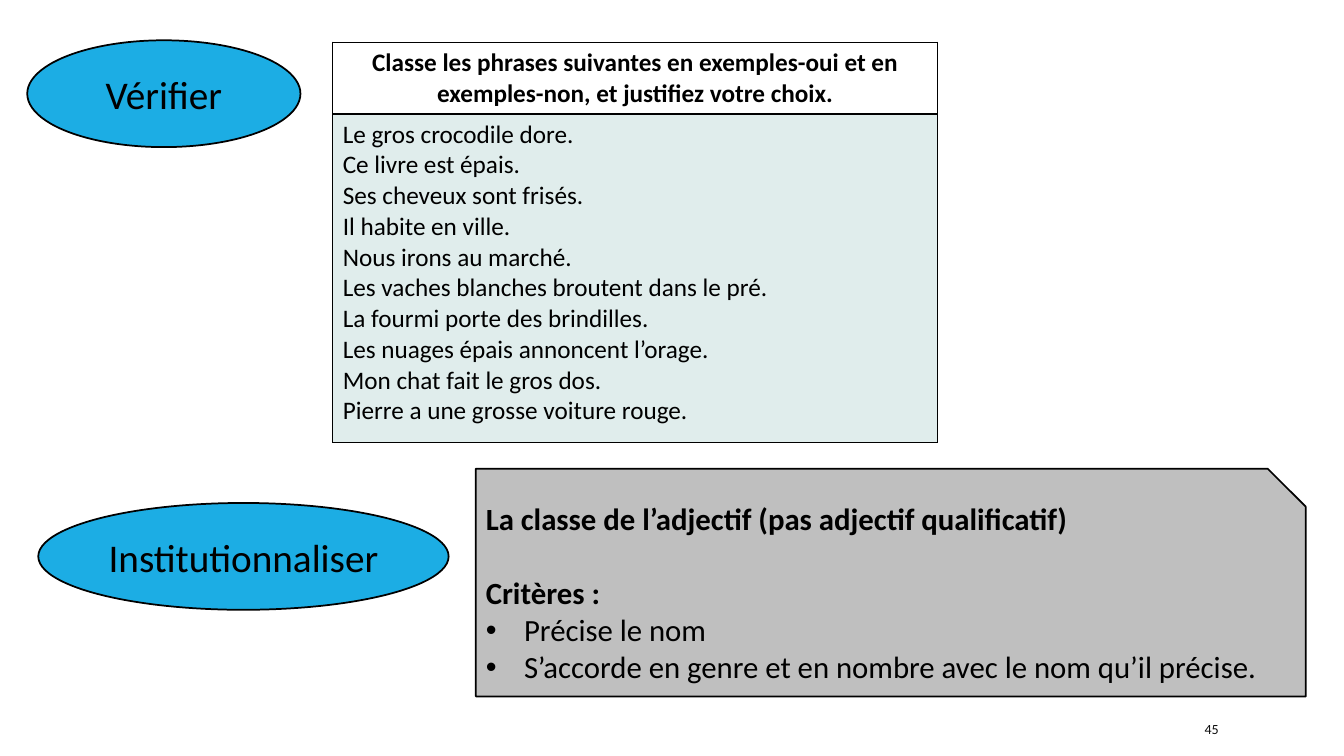
"""Build the slide on checking and formalising the adjective class."""
from dataclasses import dataclass

from lxml.etree import SubElement
from pptx import Presentation
from pptx.dml.color import RGBColor
from pptx.enum.shapes import MSO_SHAPE as Preset
from pptx.enum.text import MSO_ANCHOR as Anchor, PP_ALIGN as Align
from pptx.oxml.ns import qn
from pptx.util import Inches, Pt


@dataclass(frozen=True)
class Theme:
    font: str = "Calibri"
    ink: RGBColor = RGBColor(0x00, 0x00, 0x00)
    number_ink: RGBColor = RGBColor(0x0D, 0x0D, 0x0D)
    step: RGBColor = RGBColor(0x1C, 0xAD, 0xE4)
    rule: RGBColor = RGBColor(0xBF, 0xBF, 0xBF)
    sentences: RGBColor = RGBColor(0xE0, 0xED, 0xEC)
    step_size: Pt = Pt(28)
    rule_size: Pt = Pt(22)
    table_size: Pt = Pt(18)
    number_size: Pt = Pt(10)
    outline: Pt = Pt(1.25)
    border: Pt = Pt(1)


@dataclass(frozen=True)
class Box:
    left: float
    top: float
    width: float
    height: float

    def lengths(self) -> tuple:
        return tuple(Inches(n) for n in (self.left, self.top, self.width, self.height))


@dataclass(frozen=True)
class Line:
    text: str
    size: Pt
    bold: bool = False
    align: Align = Align.LEFT
    color: RGBColor = RGBColor(0x00, 0x00, 0x00)
    space_before: Pt = Pt(0)
    bullet: bool = False


@dataclass(frozen=True)
class Panel:
    preset: Preset
    box: Box
    fill: RGBColor
    lines: list[Line]


THEME = Theme()
SENTENCES = [
    "Le gros crocodile dore.",
    "Ce livre est épais.",
    "Ses cheveux sont frisés.",
    "Il habite en ville.",
    "Nous irons au marché.",
    "Les vaches blanches broutent dans le pré.",
    "La fourmi porte des brindilles.",
    "Les nuages épais annoncent l’orage.",
    "Mon chat fait le gros dos.",
    "Pierre a une grosse voiture rouge.",
]
INSTRUCTION = Line(
    "Classe les phrases suivantes en exemples-oui et en exemples-non, et justifiez votre choix.",
    THEME.table_size, bold=True, align=Align.CENTER)
PANELS = [
    Panel(Preset.OVAL, Box(0.27, 0.4, 2.71, 1.06), THEME.step,
          [Line("Vérifier", THEME.step_size, align=Align.CENTER)]),
    Panel(Preset.OVAL, Box(0.38, 4.99, 4.07, 1.06), THEME.step,
          [Line("Institutionnaliser", THEME.step_size, align=Align.CENTER)]),
    Panel(Preset.SNIP_1_RECTANGLE, Box(4.72, 4.65, 8.23, 2.26), THEME.rule, [
        Line("La classe de l’adjectif (pas adjectif qualificatif)", THEME.rule_size, bold=True),
        Line("Critères :", THEME.rule_size, bold=True, space_before=Pt(27)),
        Line("Précise le nom", THEME.rule_size, bullet=True),
        Line("S’accorde en genre et en nombre avec le nom qu’il précise.",
             THEME.rule_size, bullet=True),
    ]),
]


def add_bullet(paragraph) -> None:
    properties = paragraph._p.get_or_add_pPr()
    indent = Inches(0.38)
    for name, value in {"marL": indent, "indent": -indent}.items():
        properties.set(name, str(value))
    SubElement(properties, qn("a:buFont")).set("typeface", "Arial")
    SubElement(properties, qn("a:buChar")).set("char", "•")


def write_lines(text_frame, lines: list[Line]) -> None:
    text_frame.word_wrap = True
    for index, line in enumerate(lines):
        paragraph = text_frame.add_paragraph() if index else text_frame.paragraphs[0]
        paragraph.alignment = line.align
        paragraph.space_before = line.space_before
        if line.bullet:
            add_bullet(paragraph)
        run = paragraph.add_run()
        run.text = line.text
        formats = {"name": THEME.font, "size": line.size, "bold": line.bold}
        for name, value in formats.items():
            setattr(run.font, name, value)
        run.font.color.rgb = line.color


def add_panel(slide, panel: Panel) -> None:
    shape = slide.shapes.add_shape(panel.preset, *panel.box.lengths())
    shape.shadow.inherit = False
    shape.fill.solid()
    shape.fill.fore_color.rgb = panel.fill
    shape.line.color.rgb = THEME.ink
    shape.line.width = THEME.outline
    shape.text_frame.vertical_anchor = Anchor.MIDDLE
    write_lines(shape.text_frame, panel.lines)


def add_borders(cell) -> None:
    properties = cell._tc.get_or_add_tcPr()
    for position, side in enumerate(("lnL", "lnR", "lnT", "lnB")):
        border = SubElement(properties, qn(f"a:{side}"))
        border.set("w", str(THEME.border))
        fill = SubElement(border, qn("a:solidFill"))
        SubElement(fill, qn("a:srgbClr")).set("val", str(THEME.ink))
        properties.insert(position, border)


def add_sentence_table(slide, box: Box, header_height: float) -> None:
    table = slide.shapes.add_table(2, 1, *box.lengths()).table
    table.horz_banding = False
    heights = (header_height, box.height - header_height)
    for row, height in zip(table.rows, heights):
        row.height = Inches(height)
    header, body = table.cell(0, 0), table.cell(1, 0)
    header.fill.background()
    body.fill.solid()
    body.fill.fore_color.rgb = THEME.sentences
    write_lines(header.text_frame, [INSTRUCTION])
    write_lines(body.text_frame, [Line(text, THEME.table_size) for text in SENTENCES])
    for cell in (header, body):
        add_borders(cell)


def add_page_number(slide, box: Box, number: str) -> None:
    text_frame = slide.shapes.add_textbox(*box.lengths()).text_frame
    text_frame.vertical_anchor = Anchor.MIDDLE
    write_lines(text_frame, [Line(number, THEME.number_size, color=THEME.number_ink)])


def main() -> None:
    presentation = Presentation()
    presentation.slide_width = Inches(13.33)
    presentation.slide_height = Inches(7.5)
    slide = presentation.slides.add_slide(presentation.slide_layouts.get_by_name("Blank"))
    add_sentence_table(slide, Box(3.3, 0.42, 6, 3.96), header_height=0.7)
    for panel in PANELS:
        add_panel(slide, panel)
    add_page_number(slide, Box(11.85, 7.08, 1.06, 0.3), "45")
    presentation.save("out.pptx")


if __name__ == "__main__":
    main()
